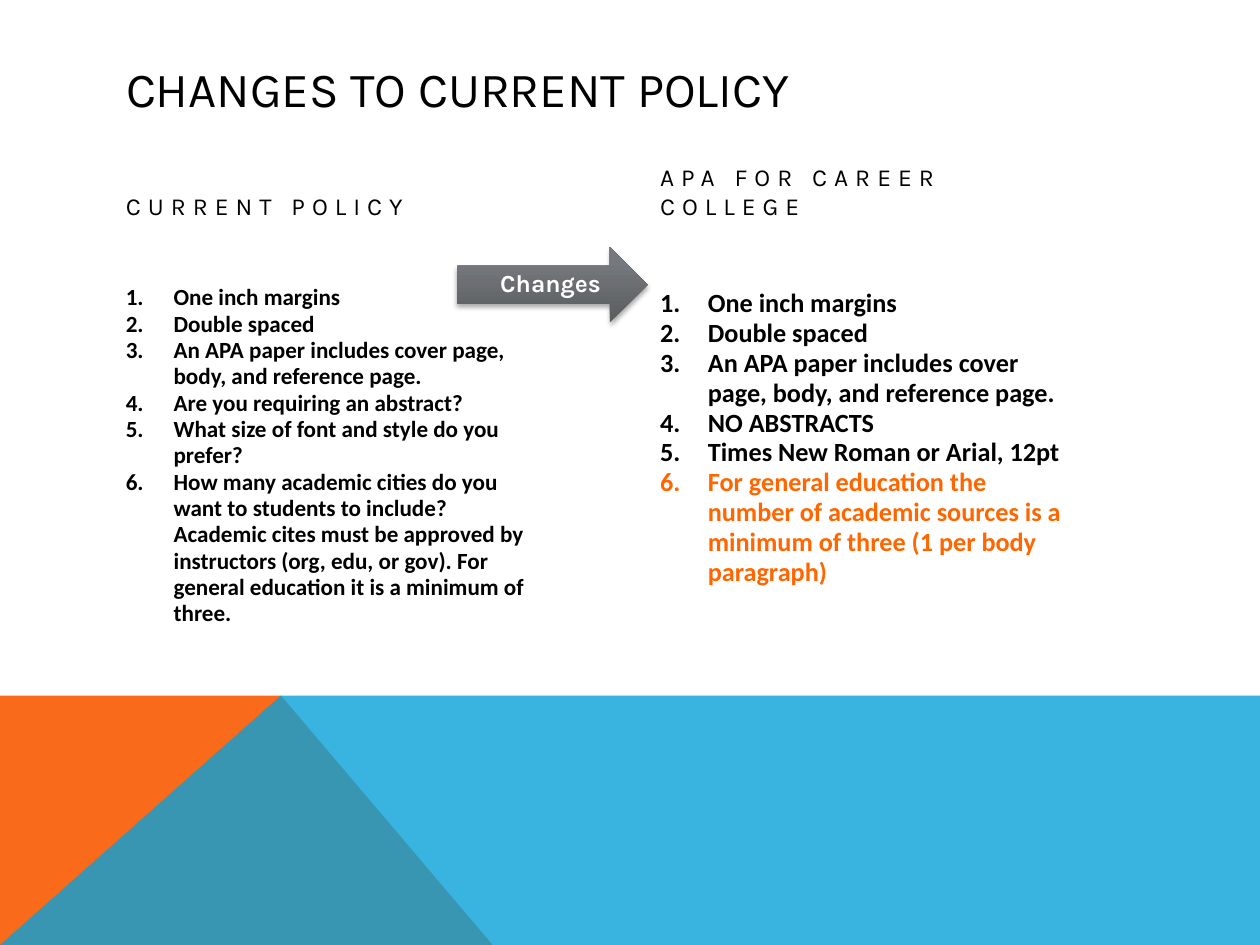
from dataclasses import dataclass
from lxml import etree
from pptx import Presentation
from pptx import util as u
from pptx.dml.color import RGBColor
from pptx.enum import shapes, text
from pptx.oxml import ns


@dataclass(frozen=True)
class Theme:
    head: str = "Karla"
    body: str = "Calibri"
    ink: str = "000000"
    white: str = "FFFFFF"
    accent: str = "FF6600"
    orange: str = "F96A1B"
    blue: str = "08A1D9"
    dark: str = "5A5C5F"
    gray: str = "75787C"
    title: float = 28
    label: float = 14


@dataclass(frozen=True)
class Column:
    left: float
    head: str
    size: float
    inset: float
    items: tuple[str, ...]
    last: str


T = Theme()
SHARED = ("One inch margins", "Double spaced",
          "An APA paper includes cover page, body, and reference page.")
COLS = (
    Column(0.9, "CURRENT POLICY", 13.2, 0.4, SHARED + (
        "Are you requiring an abstract?",
        "What size of font and style do you prefer?",
        "How many academic cities do you want to students to include? "
        "Academic cites must be approved by instructors (org, edu, or gov). "
        "For general education it is a minimum of three."), T.ink),
    Column(5.14, "APA FOR CAREER COLLEGE", 15, 0.43, SHARED + (
        "NO ABSTRACTS",
        "Times New Roman or Arial, 12pt",
        "For general education the number of academic sources is a minimum "
        "of three (1 per body paragraph)"), T.accent),
)


def add(parent, tag: str, **attrs: str):
    return etree.SubElement(parent, ns.qn(tag), attrs)


def style(para, font: str, size: float, color: str, bold: bool = False) -> None:
    for run in para.runs:
        run.font.name = font
        run.font.size = u.Pt(size)
        run.font.bold = bold
        run.font.color.rgb = RGBColor.from_string(color)


def add_box(slide, left: float, top: float, wide: float, high: float,
            words: str, anchor):
    box = slide.shapes.add_textbox(*map(u.Inches, (left, top, wide, high)))
    frame = box.text_frame
    frame.word_wrap = True
    frame.vertical_anchor = anchor
    frame.text = words
    return frame


def add_band(slide, points: list[tuple[float, float]], color: str,
             alpha: int = 100) -> None:
    spots = [(u.Inches(x), u.Inches(y)) for x, y in points]
    pen = slide.shapes.build_freeform(*spots[0], scale=1.0)
    pen.add_line_segments(spots[1:], close=True)
    band = pen.convert_to_shape()
    band.shadow.inherit = False
    band.fill.solid()
    band.fill.fore_color.rgb = RGBColor.from_string(color)
    band.line.fill.background()
    if alpha < 100:
        tint = band.fill._xPr.find(".//" + ns.qn("a:srgbClr"))
        add(tint, "a:alpha", val=str(alpha * 1000))


def add_title(slide, words: str) -> None:
    title = slide.shapes.title
    title.left, title.top, title.width, title.height = map(
        u.Inches, (0.9, 0.4, 8.22, 0.6))
    frame = title.text_frame
    frame.text = words
    frame.vertical_anchor = text.MSO_ANCHOR.MIDDLE
    frame.paragraphs[0].alignment = text.PP_ALIGN.LEFT
    style(frame.paragraphs[0], T.head, T.title, T.ink)


def add_column(slide, col: Column) -> None:
    """Draw a letter-spaced heading above a numbered list."""
    head = add_box(slide, col.left, 1.2, 3.5, 0.6, col.head,
                   text.MSO_ANCHOR.BOTTOM).paragraphs[0]
    style(head, T.head, T.label, T.ink)
    for run in head.runs:
        run.font._element.set("spc", "400")

    frame = add_box(slide, col.left, 1.86, 3.5, 3.4, "\n".join(col.items),
                    text.MSO_ANCHOR.TOP)
    frame.margin_top = u.Inches(col.inset)
    for para in frame.paragraphs:
        para.line_spacing = 0.95
        style(para, T.body, col.size, T.ink, True)
        props = para._p.get_or_add_pPr()
        props.set("marL", str(u.Inches(0.38)))
        props.set("indent", str(-u.Inches(0.38)))
        add(props, "a:buFont", typeface="+mj-lt")
        add(props, "a:buAutoNum", type="arabicPeriod")
    style(frame.paragraphs[-1], T.body, col.size, col.last, True)


def add_arrow(slide, words: str) -> None:
    arrow = slide.shapes.add_shape(
        shapes.MSO_SHAPE.RIGHT_ARROW, *map(u.Inches, (3.63, 1.96, 1.51, 0.6)))
    arrow.line.fill.background()
    arrow.fill.gradient()
    arrow.fill.gradient_angle = 90
    for stop, color, pos in zip(arrow.fill.gradient_stops,
                                (T.dark, T.gray), (0, 0.8)):
        stop.color.rgb = RGBColor.from_string(color)
        stop.position = pos
    arrow.shadow.inherit = False
    glow = arrow._element.spPr.find(ns.qn("a:effectLst"))
    shade = add(glow, "a:outerShdw", blurRad=str(u.Pt(3.1)),
                dist=str(u.Pt(1.8)), dir="5400000", rotWithShape="0")
    add(add(shade, "a:srgbClr", val=T.ink), "a:alpha", val="35000")

    frame = add_box(slide, 3.75, 2.11, 1.24, 0.3, words, text.MSO_ANCHOR.MIDDLE)
    frame.margin_left = frame.margin_right = 0
    frame.margin_top = frame.margin_bottom = 0
    para = frame.paragraphs[0]
    para.alignment = text.PP_ALIGN.CENTER
    para.line_spacing = 0.9
    style(para, T.head, T.label, T.white, True)


def main() -> None:
    deck = Presentation()
    deck.slide_width, deck.slide_height = u.Inches(10), u.Inches(7.5)
    slide = deck.slides.add_slide(deck.slide_layouts[5])
    foot, peak = (0, 7.5), (2.23, 5.52)
    add_band(slide, [foot, (0, 5.52), peak, (3.91, 7.5)], T.orange)
    add_band(slide, [foot, peak, (10, 5.52), (10, 7.5)], T.blue, 80)
    add_title(slide, "CHANGES TO CURRENT POLICY")
    for col in COLS:
        add_column(slide, col)
    add_arrow(slide, "Changes")
    deck.save("out.pptx")


if __name__ == "__main__":
    main()
